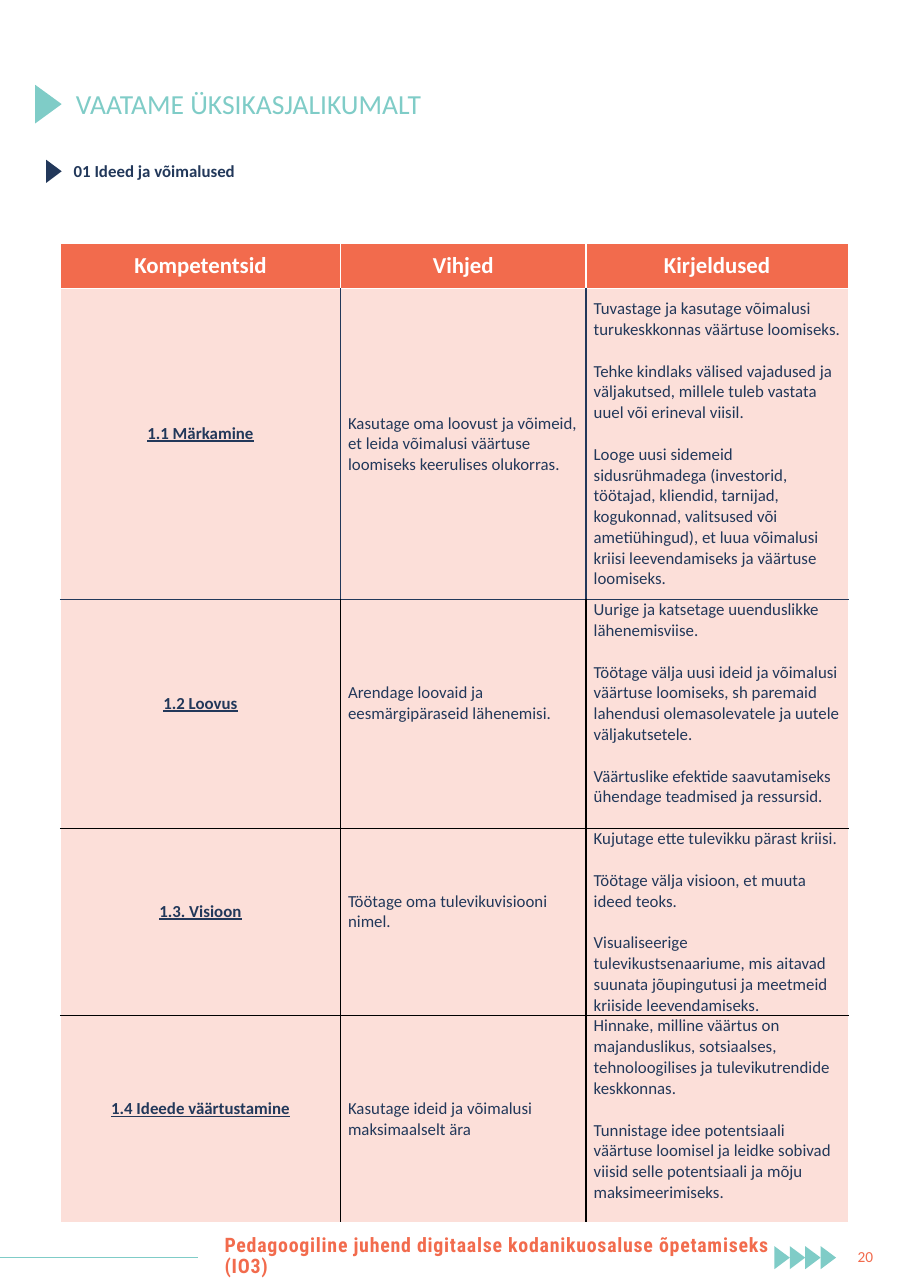
"""Build the page of the teaching guide on ideas and opportunities."""
from lxml.etree import SubElement
from pptx import Presentation
from pptx.dml.color import RGBColor
from pptx.enum.shapes import MSO_CONNECTOR
from pptx.enum.text import MSO_ANCHOR, PP_ALIGN
from pptx.oxml import parse_xml
from pptx.oxml.ns import nsdecls, qn
from pptx.util import Inches, Pt

COLOURS = {
    "teal": "7FCCC7",
    "navy": "22385A",
    "orange": "F26B4D",
    "white": "FFFFFF",
    "black": "000000",
}
LINE = Inches(0.19)
HEADERS = ["Kompetentsid", "Vihjed", "Kirjeldused"]
COLUMN_WIDTHS = [2.54, 2.23, 2.38]
ROW_HEIGHTS = [0.41, 2.82, 2.08, 1.7, 1.88]
INNER_BORDERS = ["white", "navy", "black", "black", "black"]
BOTTOM_BORDERS = ["white", "navy", "black", "black", "white"]
COMPETENCES = [
    ("1.1 Märkamine",
     "Kasutage oma loovust ja võimeid, et leida võimalusi väärtuse loomiseks keerulises olukorras.",
     ["Tuvastage ja kasutage võimalusi turukeskkonnas väärtuse loomiseks.",
      "Tehke kindlaks välised vajadused ja väljakutsed, millele tuleb vastata uuel või erineval viisil.",
      "Looge uusi sidemeid sidusrühmadega (investorid, töötajad, kliendid, tarnijad, kogukonnad, "
      "valitsused või ametiühingud), et luua võimalusi kriisi leevendamiseks ja väärtuse loomiseks."],
     (LINE, 0, 0)),
    ("1.2 Loovus",
     "Arendage loovaid ja eesmärgipäraseid lähenemisi.",
     ["Uurige ja katsetage uuenduslikke lähenemisviise.",
      "Töötage välja uusi ideid ja võimalusi väärtuse loomiseks, sh paremaid lahendusi "
      "olemasolevatele ja uutele väljakutsetele.",
      "Väärtuslike efektide saavutamiseks ühendage teadmised ja ressursid."],
     (LINE, LINE, LINE)),
    ("1.3. Visioon",
     "Töötage oma tulevikuvisiooni nimel.",
     ["Kujutage ette tulevikku pärast kriisi.",
      "Töötage välja visioon, et muuta ideed teoks.",
      "Visualiseerige tulevikustsenaariume, mis aitavad suunata jõupingutusi ja meetmeid "
      "kriiside leevendamiseks."],
     (LINE, LINE, 0)),
    ("1.4 Ideede väärtustamine",
     "Kasutage ideid ja võimalusi maksimaalselt ära",
     ["Hinnake, milline väärtus on majanduslikus, sotsiaalses, tehnoloogilises ja "
      "tulevikutrendide keskkonnas.",
      "Tunnistage idee potentsiaali väärtuse loomisel ja leidke sobivad viisid selle "
      "potentsiaali ja mõju maksimeerimiseks."],
     (LINE, 0, LINE)),
]


def write(frame, texts, colour, font_format, paragraph_format):
    frame.word_wrap = True
    for index, text in enumerate(texts):
        paragraph = frame.paragraphs[0] if index == 0 else frame.add_paragraph()
        for name, value in paragraph_format.items():
            setattr(paragraph, name, value)
        if index:
            paragraph.space_before = LINE
        run = paragraph.add_run()
        run.text = text
        run.font.color.rgb = RGBColor.from_string(COLOURS[colour])
        for name, value in font_format.items():
            setattr(run.font, name, value)


def add_triangle(left, top, width, height, colour):
    builder = slide.shapes.build_freeform(Inches(left), Inches(top))
    builder.add_line_segments([
        (Inches(left + width), Inches(top + height / 2)),
        (Inches(left), Inches(top + height)),
    ], close=True)
    shape = builder.convert_to_shape()
    shape.shadow.inherit = False
    shape.fill.solid()
    shape.fill.fore_color.rgb = RGBColor.from_string(COLOURS[colour])
    shape.line.fill.background()


presentation = Presentation()
presentation.slide_width = Inches(8.27)
presentation.slide_height = Inches(11.69)
slide = presentation.slides.add_slide(presentation.slide_layouts[6])

for number in range(4):
    add_triangle(7.03 + 0.14 * number, 11.31, 0.14, 0.21, "teal")
add_triangle(0.32, 0.77, 0.24, 0.35, "teal")
add_triangle(0.42, 1.45, 0.14, 0.21, "navy")

spaced = {"line_spacing": 0.9, "space_before": Pt(8.3)}
text_boxes = [
    ((7.66, 11.26, 0.39, 0.29), "20", "orange", MSO_ANCHOR.MIDDLE,
     {"name": "Calibri", "size": Pt(10)}, {"alignment": PP_ALIGN.CENTER}),
    ((0.59, 0.61, 7.15, 0.7), "VAATAME ÜKSIKASJALIKUMALT", "teal", MSO_ANCHOR.MIDDLE,
     {"name": "Calibri", "size": Pt(18)}, spaced),
    ((0.57, 1.43, 7.15, 0.55), "01 Ideed ja võimalused", "navy", MSO_ANCHOR.TOP,
     {"name": "Calibri", "size": Pt(11), "bold": True},
     {**spaced, "alignment": PP_ALIGN.JUSTIFY}),
    ((1.94, 11.13, 5.16, 0.55),
     "Pedagoogiline juhend digitaalse kodanikuosaluse õpetamiseks (IO3)",
     "orange", MSO_ANCHOR.MIDDLE,
     {"name": "Roboto Condensed", "size": Pt(13), "bold": True}, spaced),
]
for box, text, colour, anchor, font_format, paragraph_format in text_boxes:
    text_box = slide.shapes.add_textbox(*[Inches(length) for length in box])
    text_box.text_frame.vertical_anchor = anchor
    write(text_box.text_frame, [text], colour, font_format, paragraph_format)
footer_run = text_box.text_frame.paragraphs[0].runs[0]
footer_run.font.language_id = None
footer_run.font.fill
footer_run._r.get_or_add_rPr().set("spc", "50")

footer_line = slide.shapes.add_connector(
    MSO_CONNECTOR.STRAIGHT, Inches(0), Inches(11.41), Inches(1.8), Inches(11.41))
footer_line.line.color.rgb = RGBColor.from_string(COLOURS["teal"])
footer_line.line.width = Pt(0.75)
SubElement(footer_line._element.spPr, qn("a:effectLst"))

table = slide.shapes.add_table(
    len(ROW_HEIGHTS), len(COLUMN_WIDTHS), Inches(0.55), Inches(2.21),
    Inches(sum(COLUMN_WIDTHS)), Inches(sum(ROW_HEIGHTS))).table
for column, width in zip(table.columns, COLUMN_WIDTHS):
    column.width = Inches(width)
for row, height in zip(table.rows, ROW_HEIGHTS):
    row.height = Inches(height)

header_font = {"name": "Calibri", "size": Pt(14.9), "bold": True}
label_font = {"name": "Calibri", "size": Pt(11), "bold": True, "underline": True}
body_font = {"name": "Calibri", "size": Pt(11), "bold": False}
centred = {"alignment": PP_ALIGN.CENTER}
for column_index, header in enumerate(HEADERS):
    write(table.cell(0, column_index).text_frame, [header], "white", header_font, centred)
for row_index, (label, hint, descriptions, bottoms) in enumerate(COMPETENCES, 1):
    contents = [([label], label_font, centred), ([hint], body_font, {}),
                (descriptions, body_font, {})]
    for column_index, (texts, font_format, paragraph_format) in enumerate(contents):
        cell = table.cell(row_index, column_index)
        margins = {"margin_left": Inches(0.07), "margin_right": Inches(0.07),
                   "margin_top": 0, "margin_bottom": bottoms[column_index]}
        for name, value in margins.items():
            setattr(cell, name, value)
        write(cell.text_frame, texts, "navy", font_format, paragraph_format)

last_column = len(COLUMN_WIDTHS) - 1
for row_index, row in enumerate(table.rows):
    for column_index, cell in enumerate(row.cells):
        cell.vertical_anchor = MSO_ANCHOR.MIDDLE
        cell.fill.solid()
        cell.fill.fore_color.rgb = RGBColor.from_string(COLOURS["orange"])
        properties = cell._tc.get_or_add_tcPr()
        if row_index:
            SubElement(properties.find(".//" + qn("a:srgbClr")), qn("a:alpha"), val="21000")
        inner = INNER_BORDERS[row_index]
        borders = {
            "lnL": inner if column_index else "white",
            "lnR": inner if column_index < last_column else "white",
            "lnT": BOTTOM_BORDERS[row_index - 1] if row_index else "white",
            "lnB": BOTTOM_BORDERS[row_index],
        }
        for position, (side, colour) in enumerate(borders.items()):
            properties.insert(position, parse_xml(
                f'<a:{side} {nsdecls("a")} w="12700"><a:solidFill>'
                f'<a:srgbClr val="{COLOURS[colour]}"/></a:solidFill></a:{side}>'))

presentation.save("out.pptx")
